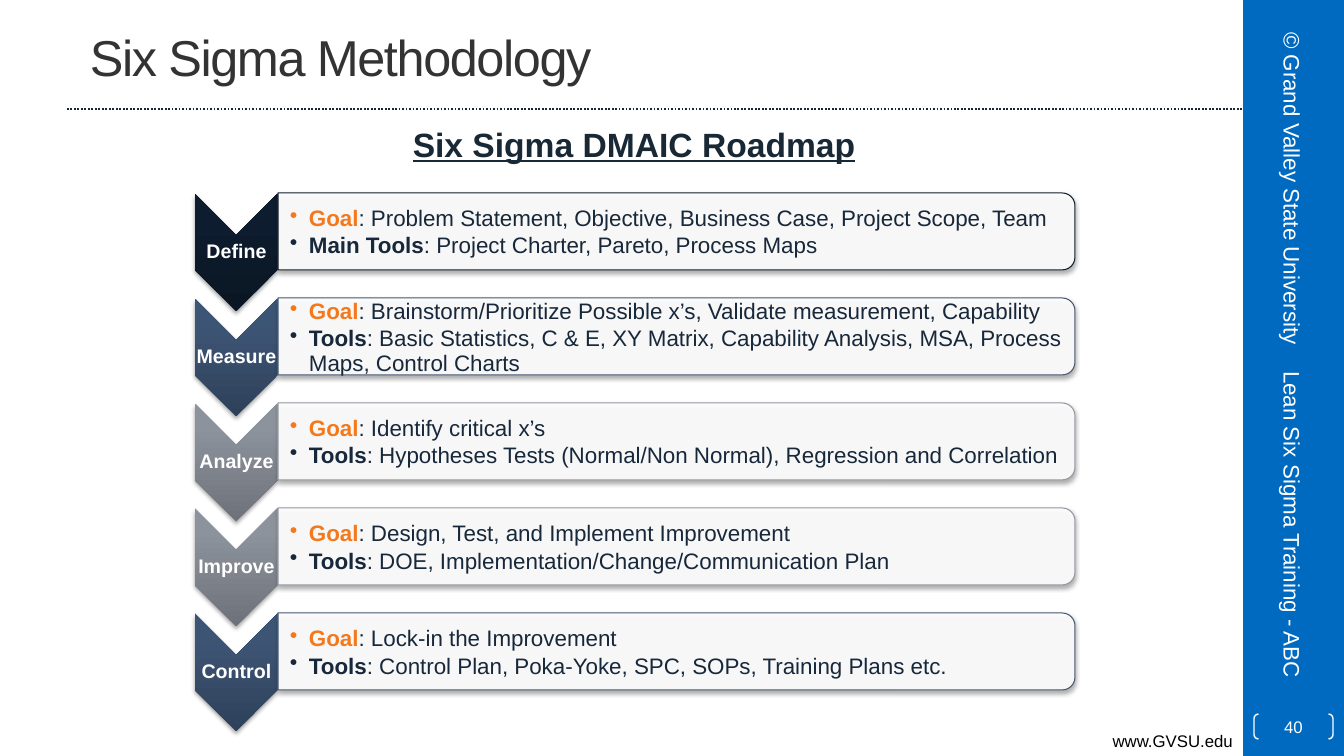
from lxml import etree
from pptx import Presentation
from pptx.dml.color import RGBColor
from pptx.enum.dml import MSO_LINE
from pptx.enum.shapes import MSO_CONNECTOR, MSO_SHAPE
from pptx.enum.text import MSO_ANCHOR, PP_ALIGN
from pptx.oxml.ns import qn
from pptx.util import Pt

LEFT, CENTER, RIGHT = PP_ALIGN.LEFT, PP_ALIGN.CENTER, PP_ALIGN.RIGHT
TOP, MIDDLE = MSO_ANCHOR.TOP, MSO_ANCHOR.MIDDLE
RECT, CHEVRON = MSO_SHAPE.RECTANGLE, MSO_SHAPE.CHEVRON
PANEL, BRACKETS = MSO_SHAPE.ROUND_2_SAME_RECTANGLE, MSO_SHAPE.DOUBLE_BRACKET
SYS_DOT, STRAIGHT = MSO_LINE.ROUND_DOT, MSO_CONNECTOR.STRAIGHT

PX = 914400 * 10 / 1008
THEME = {
    "font": "Arial",
    "white": "FFFFFF", "black": "000000", "blue": "0069C0", "rule": "17273B",
    "title": "333333", "heading": "182835", "body": "18283B", "goal": "F4791D",
    # Gradient stops at 0, 80 and 100 %, then the panel outline
    "navy": ("0A1623", "0D1C2E", "0D1C2F", "121E2C"),
    "steel": ("2F415A", "3D5575", "3D5577", "465872"),
    "grey": ("6D7179", "8D939D", "8E949E", "9498A0"),
    "title_pt": 36, "heading_pt": 24, "body_pt": 16, "label_pt": 14, "small_pt": 12,
}
STEPS = [
    ("Define", "navy",
     "Problem Statement, Objective, Business Case, Project Scope, Team",
     "Main Tools", "Project Charter, Pareto, Process Maps"),
    ("Measure", "steel",
     "Brainstorm/Prioritize Possible x’s, Validate measurement, Capability",
     "Tools", "Basic Statistics, C & E, XY Matrix, Capability Analysis, MSA, "
     "Process Maps, Control Charts"),
    ("Analyze", "grey", "Identify critical x’s",
     "Tools", "Hypotheses Tests (Normal/Non Normal), Regression and Correlation"),
    ("Improve", "grey", "Design, Test, and Implement Improvement",
     "Tools", "DOE, Implementation/Change/Communication Plan"),
    ("Control", "steel", "Lock-in the Improvement",
     "Tools", "Control Plan, Poka-Yoke, SPC, SOPs, Training Plans etc."),
]


def px(*lengths):
    return [round(n * PX) for n in lengths]


def add_text(box, paragraphs, size, align=LEFT, anchor=MIDDLE, insets=(10, 5, 10, 5), shape=None):
    """Write paragraphs of (text, colour, bold) runs into a new text box or a given shape."""
    s = shape or slide.shapes.add_textbox(*px(*box))
    tf = s.text_frame
    tf.word_wrap = True
    tf.vertical_anchor = anchor
    tf.margin_left, tf.margin_top, tf.margin_right, tf.margin_bottom = px(*insets)
    for i, runs in enumerate(paragraphs):
        p = tf.add_paragraph() if i else tf.paragraphs[0]
        p.alignment = align
        for text, colour, bold in runs:
            r = p.add_run()
            r.text = text
            r.font.name = THEME["font"]
            r.font.size = Pt(THEME[size])
            r.font.bold = bold
            r.font.color.rgb = RGBColor.from_string(THEME[colour])
    return s


prs = Presentation()
prs.slide_width, prs.slide_height = px(1344, 756)
slide = prs.slides.add_slide(prs.slide_layouts[6])

# Side band and dotted rule
band = slide.shapes.add_shape(RECT, *px(1243, 0, 101, 756))
band.shadow.inherit = False
band.fill.solid()
band.fill.fore_color.rgb = RGBColor.from_string(THEME["blue"])
band.line.fill.background()

rule = slide.shapes.add_connector(STRAIGHT, *px(67, 109, 1243, 109))
rule.line.color.rgb = RGBColor.from_string(THEME["rule"])
rule.line.width = Pt(1.25)
rule.line.dash_style = SYS_DOT
etree.SubElement(rule._element.spPr, qn("a:effectLst"))

# Web address, title and heading
add_text((0, 726, 1243, 30), [[("www.GVSU.edu", "black", False)]], "small_pt", RIGHT, TOP)
title = add_text((67, 3, 1120, 106), [[("Six Sigma Methodology", "title", False)]],
                 "title_pt", insets=(23, 5, 10, 5))
title.text_frame.paragraphs[0].runs[0].font._element.set("spc", "-100")
heading = add_text((168, 119, 932, 50), [[("Six Sigma DMAIC Roadmap", "heading", True)]],
                   "heading_pt", CENTER, TOP)
heading.text_frame.paragraphs[0].runs[0].font.underline = True

# DMAIC rows: chevron with label, panel with bullets
ROW_STEP = 105
for row, (name, scheme, goal, tools_label, tools) in enumerate(STEPS):
    dy = row * ROW_STEP
    *stops, outline = THEME[scheme]
    chevron = slide.shapes.add_shape(CHEVRON, *px(177, 211 + dy, 118, 83))
    panel = slide.shapes.add_shape(PANEL, *px(638, dy - 167, 77, 797))

    chevron.fill.gradient()
    chevron.fill.gradient_angle = 90
    chevron.line.fill.background()
    grad = chevron._element.spPr.find(qn("a:gradFill"))
    grad.set("rotWithShape", "0")
    stop_list = grad.find(qn("a:gsLst"))
    for stop in list(stop_list):
        stop_list.remove(stop)
    for position, colour in zip((0, 80, 100), stops):
        stop = etree.SubElement(stop_list, qn("a:gs"), pos=str(position * 1000))
        etree.SubElement(stop, qn("a:srgbClr"), val=colour)

    panel.fill.solid()
    panel.fill.fore_color.rgb = RGBColor.from_string(THEME["white"])
    fill_colour = panel._element.spPr.find(qn("a:solidFill"))[0]
    etree.SubElement(fill_colour, qn("a:alpha"), val="90000")
    panel.line.color.rgb = RGBColor.from_string(outline)
    panel.line.width = Pt(0.75)

    for s in (chevron, panel):
        s.rotation = 90
        s.shadow.inherit = False
        effects = s._element.spPr.find(qn("a:effectLst"))
        shadow = etree.SubElement(effects, qn("a:outerShdw"), blurRad="40000", dist="23000",
                                  dir="5400000", rotWithShape="0")
        shadow_colour = etree.SubElement(shadow, qn("a:srgbClr"), val=THEME["black"])
        etree.SubElement(shadow_colour, qn("a:alpha"), val="35000")

    label = add_text((195, 235 + dy, 83, 35), [[(name, "white", True)]], "label_pt", CENTER,
                     insets=(1, 1, 1, 1))
    label.text_frame.paragraphs[0].line_spacing = 0.9

    bullets = add_text((278, 198 + dy, 793, 70), [
        [("Goal", "goal", True), (": " + goal, "body", False)],
        [(tools_label, "body", True), (": " + tools, "body", False)],
    ], "body_pt", insets=(12, 1, 1, 1))
    for p in bullets.text_frame.paragraphs:
        pPr = p._p.get_or_add_pPr()
        indent = px(19)[0]
        pPr.set("marL", str(indent))
        pPr.set("indent", str(-indent))
        etree.SubElement(pPr, qn("a:buChar"), char="•")
        p.line_spacing = 0.9
        p.space_after = Pt(2.4)

# Side band texts and slide number
for top, text, align in ((507, "Lean Six Sigma Training - ABC", LEFT),
                         (162, "© Grand Valley State University", CENTER)):
    side = add_text((1120, top, 345, 53), [[(text, "white", False)]], "body_pt", align)
    side.rotation = 90

number = slide.shapes.add_shape(BRACKETS, *px(1254, 714, 79, 25))
number.shadow.inherit = False
number.adjustments[0] = 0.18
number.fill.background()
number.line.color.rgb = RGBColor.from_string(THEME["white"])
number.line.width = Pt(1)
add_text(None, [[("40", "white", False)]], "small_pt", CENTER, insets=(0, 0, 0, 0), shape=number)

prs.save("out.pptx")
